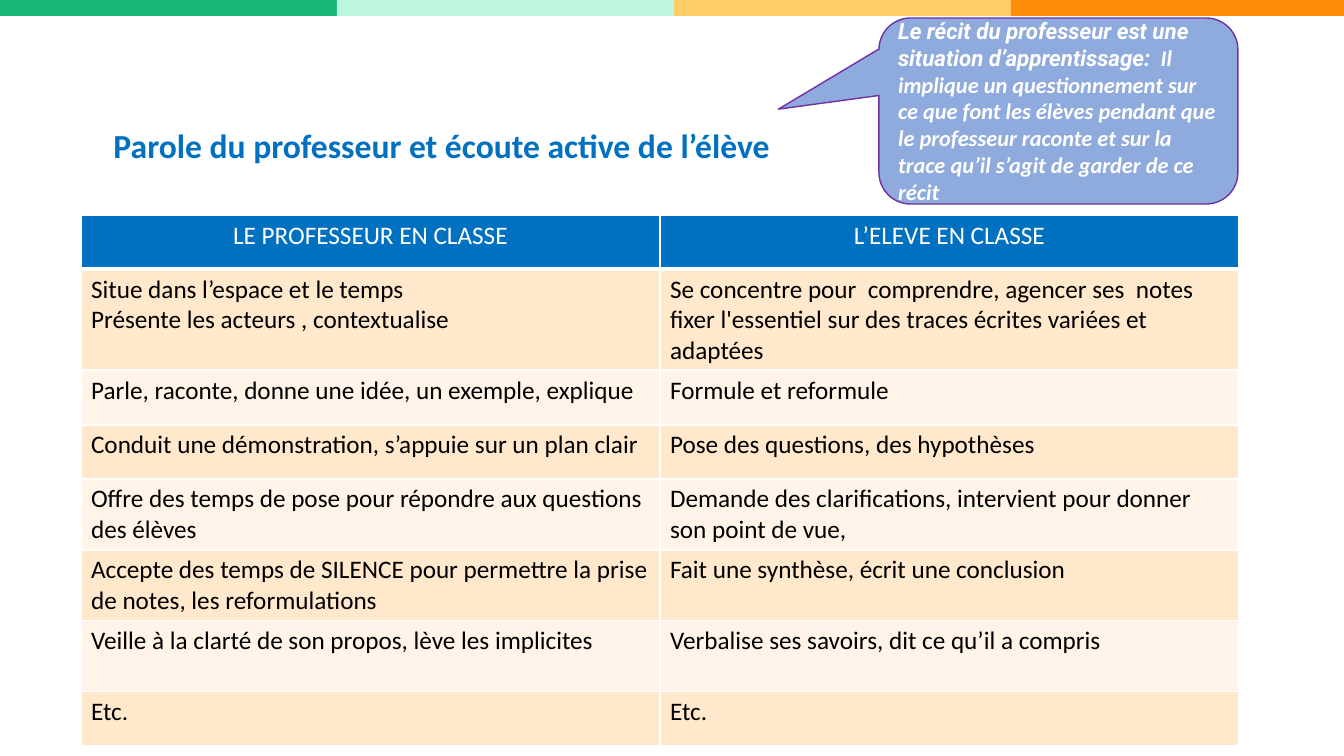
from dataclasses import dataclass

import lxml.etree
import pptx
import pptx.dml.color
import pptx.enum.shapes
import pptx.enum.text
import pptx.oxml.ns
import pptx.util

EMU_PER_PX = 12192000 / 1344
COLOURS = {
    "green": "19B777", "mint": "BCF6DF", "yellow": "FFCC66", "orange": "FF8D09",
    "blue": "0070C0", "peach": "FFE8CC", "cream": "FFF4E7",
    "callout": "8FAADC", "purple": "7030A0", "white": "FFFFFF", "black": "000000",
}
BAR_STEP, BAR_HEIGHT = 337, 16
COLUMN_WIDTH = 579
ALIGN = pptx.enum.text.PP_ALIGN
SHAPES = pptx.enum.shapes.MSO_SHAPE


@dataclass
class Bar:
    width: int
    colour: str


@dataclass
class Row:
    height: int
    teacher: str
    pupil: str


BARS = [Bar(344, "green"), Bar(344, "mint"), Bar(340, "yellow"), Bar(337, "orange")]

ROWS = [
    Row(54, "LE PROFESSEUR EN CLASSE", "L’ELEVE EN CLASSE"),
    Row(101, "Situe dans l’espace et le temps\nPrésente les acteurs , contextualise",
        "Se concentre pour  comprendre, agencer ses  notes\n"
        "fixer l'essentiel sur des traces écrites variées et adaptées"),
    Row(55, "Parle, raconte, donne une idée, un exemple, explique", "Formule et reformule"),
    Row(54, "Conduit une démonstration, s’appuie sur un plan clair",
        "Pose des questions, des hypothèses"),
    Row(71, "Offre des temps de pose pour répondre aux questions des élèves",
        "Demande des clarifications, intervient pour donner son point de vue,"),
    Row(70, "Accepte des temps de SILENCE pour permettre la prise de notes, les reformulations",
        "Fait une synthèse, écrit une conclusion"),
    Row(71, "Veille à la clarté de son propos, lève les implicites",
        "Verbalise ses savoirs, dit ce qu’il a compris"),
    Row(54, "Etc.", "Etc."),
]


def px(length: int) -> int:
    return round(length * EMU_PER_PX)


def rgb(name: str) -> pptx.dml.color.RGBColor:
    return pptx.dml.color.RGBColor.from_string(COLOURS[name])


def set_font(font, size: int, colour: str, bold: bool = False, italic: bool = False,
             face: str = "Calibri") -> None:
    font.name, font.size = face, pptx.util.Pt(size)
    font.bold, font.italic = bold, italic
    font.color.rgb = rgb(colour)


def add_filled(page, kind, left: int, top: int, width: int, height: int, colour: str):
    shape = page.shapes.add_shape(kind, px(left), px(top), px(width), px(height))
    shape.shadow.inherit = False
    shape.fill.solid()
    shape.fill.fore_color.rgb = rgb(colour)
    shape.line.fill.background()
    return shape


def add_title(page) -> None:
    box = page.shapes.add_textbox(px(100), px(117), px(691), px(51))
    box.text_frame.word_wrap = False
    box.text_frame.auto_size = pptx.enum.text.MSO_AUTO_SIZE.SHAPE_TO_FIT_TEXT
    para = box.text_frame.paragraphs[0]
    para.text = "Parole du professeur et écoute active de l’élève "
    para.alignment, para.line_spacing = ALIGN.CENTER, 1.07
    set_font(para.font, 24, "blue", bold=True)


def set_borders(cell, top: int, bottom: int) -> None:
    properties = cell._tc.get_or_add_tcPr()
    widths = {"lnL": 1, "lnR": 1, "lnT": top, "lnB": bottom}
    for index, (side, width) in enumerate(widths.items()):
        line = lxml.etree.Element(pptx.oxml.ns.qn(f"a:{side}"), w=str(pptx.util.Pt(width)))
        fill = lxml.etree.SubElement(line, pptx.oxml.ns.qn("a:solidFill"))
        lxml.etree.SubElement(fill, pptx.oxml.ns.qn("a:srgbClr"), val=COLOURS["white"])
        properties.insert(index, line)


def add_roles_table(page) -> None:
    frame = page.shapes.add_table(len(ROWS), 2, px(81), px(215), px(2 * COLUMN_WIDTH),
                                  px(sum(row.height for row in ROWS)))
    table = frame.table
    table.first_row = table.horz_banding = False
    for column in table.columns:
        column.width = px(COLUMN_WIDTH)
    for index, row in enumerate(ROWS):
        table.rows[index].height = px(row.height)
        header = index == 0
        band = "blue" if header else ("cream", "peach")[index % 2]
        for cell, text in zip(table.rows[index].cells, (row.teacher, row.pupil)):
            cell.text = text
            cell.fill.solid()
            cell.fill.fore_color.rgb = rgb(band)
            set_borders(cell, top=3 if index == 1 else 1, bottom=3 if header else 1)
            for para in cell.text_frame.paragraphs:
                para.alignment = ALIGN.CENTER if header else ALIGN.LEFT
                set_font(para.font, 18, "white" if header else "black")


def add_callout(page) -> None:
    callout = add_filled(page, SHAPES.ROUNDED_RECTANGULAR_CALLOUT, 879, 18, 359, 186, "callout")
    for index, value in enumerate((-0.78, -0.01, 0.17)):
        callout.adjustments[index] = value
    callout.line.color.rgb = rgb("purple")
    callout.line.width = pptx.util.Pt(1)
    callout.text_frame.word_wrap = True
    callout.text_frame.vertical_anchor = pptx.enum.text.MSO_ANCHOR.MIDDLE
    para = callout.text_frame.paragraphs[0]
    para.alignment = ALIGN.LEFT
    spans = [
        ("Roboto", "Le récit du professeur est une situation d’apprentissage:"),
        ("Calibri", "  Il implique un questionnement sur ce que font les élèves pendant que "
                    "le professeur raconte et sur la trace qu’il s’agit de garder de ce récit"),
    ]
    for face, text in spans:
        span = para.add_run()
        span.text = text
        set_font(span.font, 16, "white", bold=True, italic=True, face=face)


def main() -> None:
    deck = pptx.Presentation()
    deck.slide_width, deck.slide_height = px(1344), px(756)
    page = deck.slides.add_slide(deck.slide_layouts[6])

    # Colour strip along the top edge
    for index, bar in enumerate(BARS):
        add_filled(page, SHAPES.RECTANGLE, index * BAR_STEP, 0, bar.width, BAR_HEIGHT, bar.colour)

    # Title, table of roles and callout
    add_title(page)
    add_roles_table(page)
    add_callout(page)

    deck.save("out.pptx")


if __name__ == "__main__":
    main()
